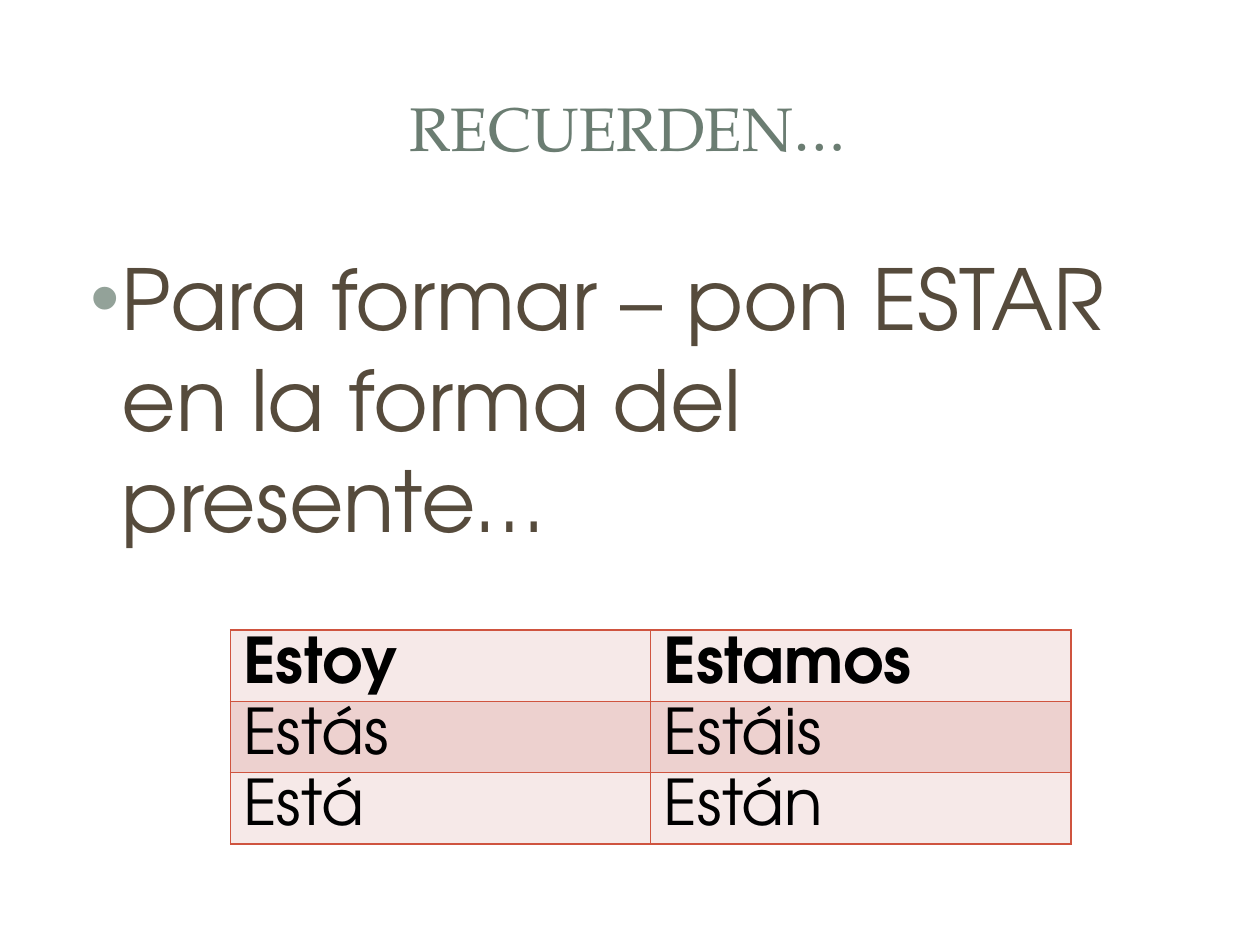
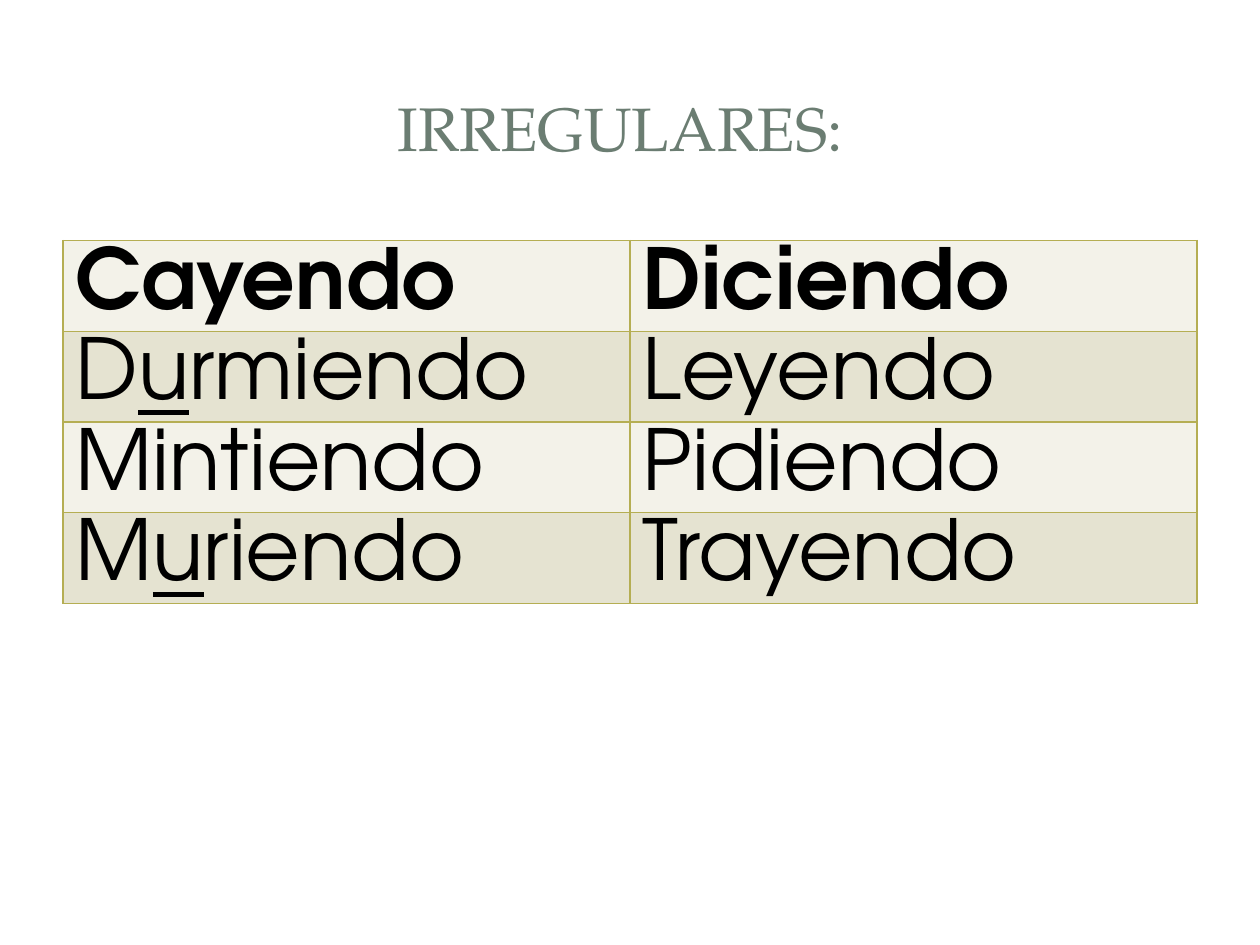
from lxml import etree
from pptx import Presentation
from pptx.dml.color import RGBColor
from pptx.enum.shapes import MSO_SHAPE
from pptx.enum.text import MSO_ANCHOR, MSO_AUTO_SIZE, PP_ALIGN
from pptx.oxml.ns import qn
from pptx.util import Inches, Pt

CENTER = PP_ALIGN.CENTER
MIDDLE = MSO_ANCHOR.MIDDLE
NO_AUTOSIZE = MSO_AUTO_SIZE.NONE
RECTANGLE = MSO_SHAPE.RECTANGLE
ROUNDED_RECTANGLE = MSO_SHAPE.ROUNDED_RECTANGLE
TITLE_ONLY = 5

COLORS = {
    "background": "FFFFFF",
    "panel": "FFFFFF",
    "title": "6B7D72",
    "body": "564B3C",
    "bullet": "93A299",
    "cell_text": "000000",
}
RED_TABLE = {"border": "CF543F", "bands": ("F6E9E8", "EDD1CF")}
OLIVE_TABLE = {"border": "B5AE53", "bands": ("F3F2E9", "E5E3D1")}
TITLE_FONT = "TeX Gyre Pagella"
BODY_FONT = "TeX Gyre Adventor"
PAGE_BOX = (0.1, 0.11, 9.8, 7.29)
BAND_BOX = (0.3, 0.3, 9.4, 1.45)
TITLE_PANEL_BOX = (0.41, 0.41, 9.17, 1.22)
TITLE_BOX = (0.47, 0.44, 9.03, 1.14)
CELL_LINE_RATIO = 0.93
CELL_MARGINS = 0.1


def rgb(value):
    return RGBColor.from_string(value)


def add_run(paragraph, text, font_name, size, color, bold=False):
    run = paragraph.add_run()
    run.text = text
    run.font.name = font_name
    run.font.size = Pt(size)
    run.font.bold = bold
    run.font.color.rgb = rgb(color)
    return run


def add_panel(slide, kind, box):
    panel = slide.shapes.add_shape(kind, *map(Inches, box))
    panel.shadow.inherit = False
    panel.fill.solid()
    panel.fill.fore_color.rgb = rgb(COLORS["panel"])
    panel.line.fill.background()
    return panel


def add_backdrop(slide):
    page = add_panel(slide, ROUNDED_RECTANGLE, PAGE_BOX)
    page.adjustments[0] = 0.017
    band = add_panel(slide, RECTANGLE, BAND_BOX)
    band_color = band.element.spPr.find(f"{qn('a:solidFill')}/{qn('a:srgbClr')}")
    etree.SubElement(band_color, qn("a:alpha"), val="83000")
    add_panel(slide, RECTANGLE, TITLE_PANEL_BOX)


def add_titled_slide(presentation, title):
    slide = presentation.slides.add_slide(presentation.slide_layouts[TITLE_ONLY])
    slide.background.fill.solid()
    slide.background.fill.fore_color.rgb = rgb(COLORS["background"])
    add_backdrop(slide)
    shape = slide.shapes.title
    shape.element.getparent().append(shape.element)
    shape.left, shape.top, shape.width, shape.height = map(Inches, TITLE_BOX)
    frame = shape.text_frame
    frame.word_wrap = True
    frame.auto_size = NO_AUTOSIZE
    frame.vertical_anchor = MIDDLE
    paragraph = frame.paragraphs[0]
    paragraph.alignment = CENTER
    add_run(paragraph, title, TITLE_FONT, 35, COLORS["title"])
    return slide


def set_bullet(paragraph, color):
    properties = paragraph._p.get_or_add_pPr()
    properties.set("marL", str(Inches(0.38)))
    properties.set("indent", str(Inches(-0.25)))
    bullet_color = etree.SubElement(properties, qn("a:buClr"))
    etree.SubElement(bullet_color, qn("a:srgbClr"), val=color)
    etree.SubElement(properties, qn("a:buFont"), typeface="Arial")
    etree.SubElement(properties, qn("a:buChar"), char="•")


def add_bullet_text(slide, box, text):
    frame = slide.shapes.add_textbox(*map(Inches, box)).text_frame
    frame.word_wrap = True
    paragraph = frame.paragraphs[0]
    paragraph.line_spacing = Pt(57.6)
    set_bullet(paragraph, COLORS["bullet"])
    add_run(paragraph, text, BODY_FONT, 48, COLORS["body"])


def set_cell_borders(cell, color):
    properties = cell._tc.get_or_add_tcPr()
    for position, side in enumerate(("lnL", "lnR", "lnT", "lnB")):
        line = etree.Element(qn(f"a:{side}"), w=str(Pt(1)))
        fill = etree.SubElement(line, qn("a:solidFill"))
        etree.SubElement(fill, qn("a:srgbClr"), val=color)
        properties.insert(position, line)


def fill_cell(cell, marked_text, size, band, border, bold):
    cell.fill.solid()
    cell.fill.fore_color.rgb = rgb(band)
    set_cell_borders(cell, border)
    paragraph = cell.text_frame.paragraphs[0]
    paragraph.line_spacing = Pt(round(size * CELL_LINE_RATIO, 1))
    for index, part in enumerate(marked_text.split("_")):
        run = add_run(paragraph, part, BODY_FONT, size, COLORS["cell_text"], bold)
        if index % 2:
            run.font.underline = True


def add_verb_table(slide, left, top, width, rows, size, theme):
    row_height = Inches(size * CELL_LINE_RATIO / 72 + CELL_MARGINS)
    table = slide.shapes.add_table(
        len(rows), len(rows[0]), Inches(left), Inches(top),
        Inches(width), row_height * len(rows),
    ).table
    table.first_row = False
    table.horz_banding = False
    for row_index, words in enumerate(rows):
        table.rows[row_index].height = row_height
        band = theme["bands"][row_index % 2]
        for column_index, word in enumerate(words):
            fill_cell(table.cell(row_index, column_index), word, size,
                      band, theme["border"], row_index == 0)


def build_reminder_slide(presentation):
    slide = add_titled_slide(presentation, "RECUERDEN…")
    add_bullet_text(slide, (0.49, 1.91, 9, 4.78),
                    "Para formar – pon ESTAR en la forma del presente…")
    rows = [("Estoy", "Estamos"), ("Estás", "Estáis"), ("Está", "Están")]
    add_verb_table(slide, 1.83, 5, 6.67, rows, 36, RED_TABLE)


def build_irregulars_slide(presentation):
    slide = add_titled_slide(presentation, "IRREGULARES: ")
    rows = [
        ("Cayendo", "Diciendo"),
        ("D_u_rmiendo", "Leyendo"),
        ("Mintiendo", "Pidiendo"),
        ("M_u_riendo", "Trayendo"),
    ]
    add_verb_table(slide, 0.5, 1.91, 9, rows, 48, OLIVE_TABLE)


def main():
    presentation = Presentation()
    presentation.slide_width = Inches(10)
    presentation.slide_height = Inches(7.5)
    build_reminder_slide(presentation)
    build_irregulars_slide(presentation)
    presentation.save("out.pptx")


if __name__ == "__main__":
    main()
